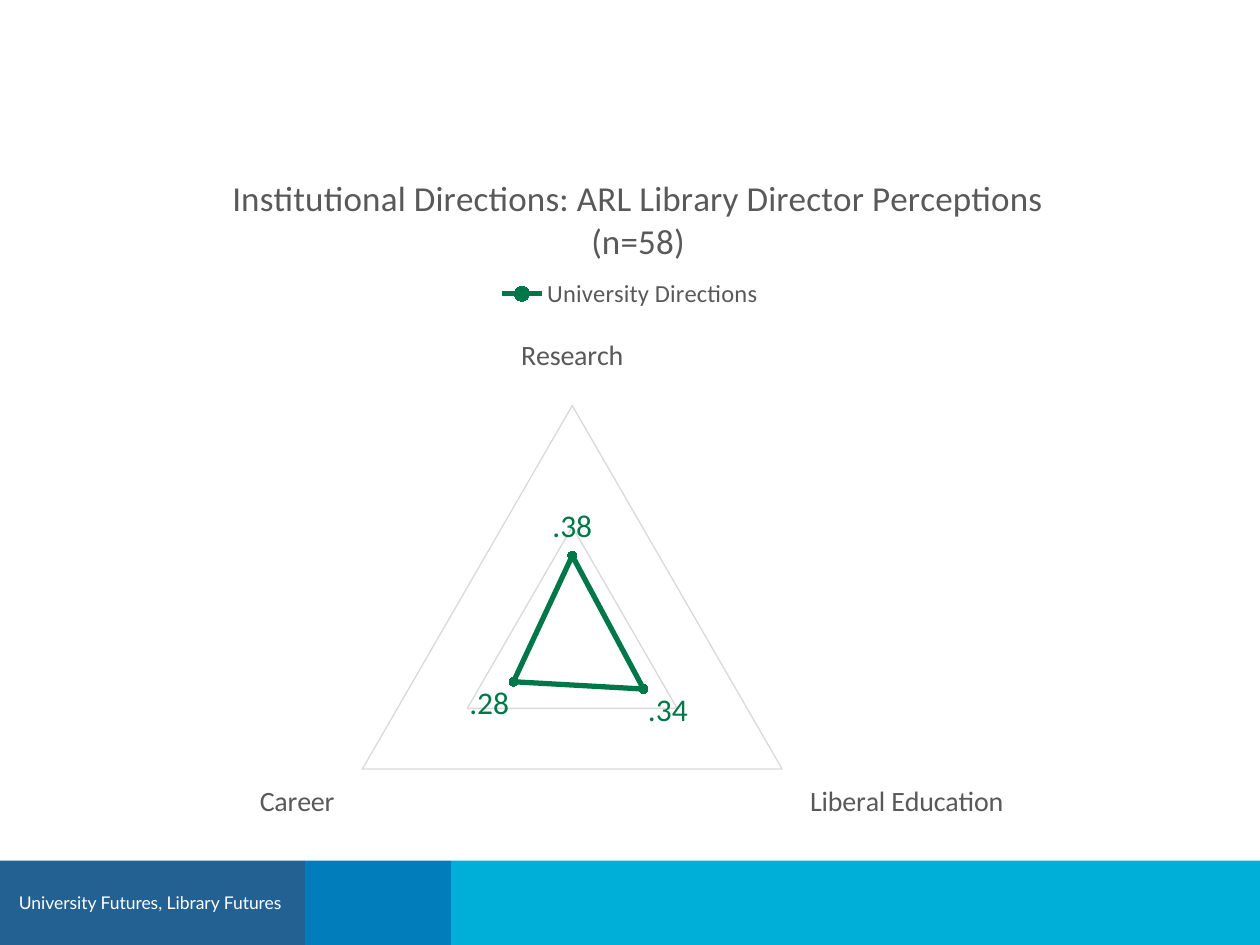
from lxml.etree import SubElement
from pptx import Presentation
from pptx.chart.data import CategoryChartData
from pptx.dml.color import RGBColor
from pptx.enum.chart import (XL_CHART_TYPE, XL_LEGEND_POSITION,
                             XL_MARKER_STYLE, XL_TICK_MARK)
from pptx.enum.shapes import MSO_SHAPE
from pptx.enum.text import MSO_ANCHOR, PP_ALIGN
from pptx.oxml.ns import qn
from pptx.util import Inches, Pt

GREEN, GREY, PALE = "007749", "595959", "D9D9D9"
BANDS = [(2.42, "236192"), (1.16, "007DBA"), (6.42, "00AFD7")]
SHARES = {"Research": 38, "Liberal Education": 34, "Career": 28}


def rgb(code):
    return RGBColor.from_string(code)


def style(font, size, color, name="Calibri"):
    font.name, font.size, font.bold = name, Pt(size), False
    font.color.rgb = rgb(color)


def rule(line, color, width):
    line.color.rgb = rgb(color)
    line.width = Pt(width)


def place(part, **spots):
    """Fix a chart part at fractions of the chart's size."""
    layout = part.find(qn("c:layout"))
    if layout is None:
        layout = part.makeelement(qn("c:layout"))
        part.find(qn("c:overlay")).addprevious(layout)
    manual = SubElement(layout, qn("c:manualLayout"))
    if part.tag == qn("c:plotArea"):
        SubElement(manual, qn("c:layoutTarget")).set("val", "inner")
    for key in ("x", "y"):
        SubElement(manual, qn(f"c:{key}Mode")).set("val", "edge")
    for key, value in spots.items():
        SubElement(manual, qn(f"c:{key}")).set("val", str(value))


def add_band(slide, left, width, color):
    band = slide.shapes.add_shape(MSO_SHAPE.RECTANGLE, Inches(left),
                                  Inches(6.83), Inches(width), Inches(0.67))
    band.shadow.inherit = False
    band.fill.solid()
    band.fill.fore_color.rgb = rgb(color)
    band.line.fill.background()
    return band


def add_footer(slide):
    left, bands = 0, []
    for width, color in BANDS:
        bands.append(add_band(slide, left, width, color))
        left += width
    frame = bands[0].text_frame
    frame.text = "University Futures, Library Futures"
    frame.margin_left, frame.margin_right = Inches(0.15), 0
    frame.vertical_anchor = MSO_ANCHOR.MIDDLE
    line = frame.paragraphs[0]
    line.alignment = PP_ALIGN.LEFT
    style(line.runs[0].font, 10, "FFFFFF", "Lato")


def add_radar(slide):
    data = CategoryChartData()
    data.categories = list(SHARES)
    data.add_series("University Directions", list(SHARES.values()))
    chart = slide.shapes.add_chart(
        XL_CHART_TYPE.RADAR_MARKERS, Inches(0.42), Inches(1.08),
        Inches(9.16), Inches(6.11), data).chart
    style(chart.font, 10, "000000")
    style_text(chart)
    style_axes(chart)
    style_series(chart.plots[0].series[0])
    place(chart._chartSpace.chart.plotArea, x=0.24, y=0.35, w=0.42, h=0.63)


def style_text(chart):
    chart.has_title = True
    title = chart.chart_title
    title.text_frame.text = ("Institutional Directions: "
                             "ARL Library Director Perceptions (n=58)")
    style(title.text_frame.paragraphs[0].runs[0].font, 20, GREY)
    title.include_in_layout = False
    place(title._element, x=0.15, y=0.04)

    chart.has_legend = True
    legend = chart.legend
    legend.position = XL_LEGEND_POSITION.TOP
    legend.include_in_layout = False
    style(legend.font, 14, GREY)
    place(legend._element, x=0.38, y=0.18, w=0.24, h=0.05)


def style_axes(chart):
    spokes, scale = chart.category_axis, chart.value_axis
    spokes.has_major_gridlines = False
    spokes.major_tick_mark = XL_TICK_MARK.NONE
    style(spokes.tick_labels.font, 16, GREY)
    rule(spokes.format.line, PALE, 0.75)
    scale.minimum_scale, scale.maximum_scale = 0, 100
    scale.major_unit = 50
    scale.has_major_gridlines = True
    rule(scale.major_gridlines.format.line, PALE, 0.75)
    scale.visible = False


def style_series(series):
    series.smooth = False
    rule(series.format.line, GREEN, 3)
    marker = series.marker
    marker.style, marker.size = XL_MARKER_STYLE.CIRCLE, 5
    marker.format.fill.solid()
    marker.format.fill.fore_color.rgb = rgb(GREEN)
    rule(marker.format.line, "006A41", 0.75)
    labels = series.data_labels
    labels.show_value = True
    labels.number_format = '"."0'
    labels.number_format_is_linked = False
    style(labels.font, 18, GREEN)


def main():
    deck = Presentation()
    deck.slide_width, deck.slide_height = Inches(10), Inches(7.5)
    slide = deck.slides.add_slide(deck.slide_layouts[6])
    add_footer(slide)
    add_radar(slide)
    deck.save("out.pptx")


if __name__ == "__main__":
    main()
